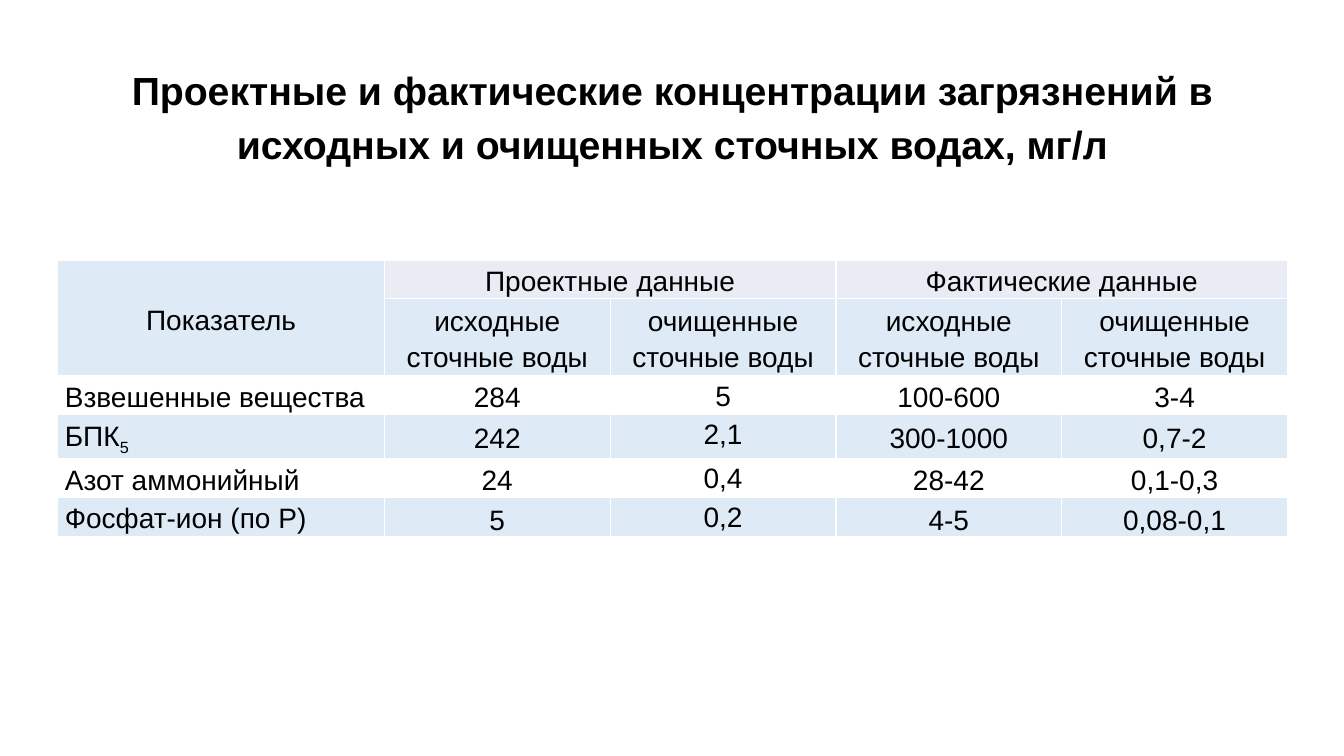
from dataclasses import dataclass

from lxml.etree import SubElement
from pptx import Presentation
from pptx.dml.color import RGBColor
from pptx.enum.text import MSO_ANCHOR, PP_ALIGN
from pptx.oxml.ns import qn
from pptx.util import Inches, Pt

SLIDE_WIDTH, SLIDE_HEIGHT = Inches(13.33), Inches(7.5)
BLACK, WHITE, BLUE, LAVENDER = "000000", "FFFFFF", "DEEBF7", "E9EBF5"
HEADING = ("Проектные и фактические концентрации загрязнений "
           "в исходных и очищенных сточных водах, мг/л")
WATERS = ("исходные сточные воды", "очищенные сточные воды")

# Percent of the slide's width and height
TABLE_LEFT, TABLE_TOP = 4.3, 34.4
INDICATOR_WIDTH, VALUE_WIDTH = 24.3, 16.8
HEADER_HEIGHT, ROW_HEIGHT = 3.87, 2.67
COLUMN_WIDTHS = [INDICATOR_WIDTH] + [VALUE_WIDTH] * 4


@dataclass(frozen=True)
class Indicator:
    name: str
    values: tuple[str, ...]
    fill: str
    subscript: str = ""
    value_anchor: MSO_ANCHOR = MSO_ANCHOR.MIDDLE


@dataclass(frozen=True)
class Header:
    text: str
    row: int
    column: int
    fill: str = BLUE
    rows: int = 1
    columns: int = 1


HEADERS = [
    Header("Показатель", 0, 0, rows=2),
    Header("Проектные данные", 0, 1, LAVENDER, columns=2),
    Header("Фактические данные", 0, 3, LAVENDER, columns=2),
    *(Header(water, 1, column) for column, water in enumerate(WATERS * 2, 1)),
]
INDICATORS = [
    Indicator("Взвешенные вещества", ("284", "5", "100-600", "3-4"), WHITE),
    Indicator("БПК", ("242", "2,1", "300-1000", "0,7-2"), BLUE, subscript="5"),
    Indicator("Азот аммонийный", ("24", "0,4", "28-42", "0,1-0,3"), WHITE),
    Indicator("Фосфат-ион (по Р)", ("5", "0,2", "4-5", "0,08-0,1"), BLUE,
              value_anchor=MSO_ANCHOR.BOTTOM),
]
ROW_HEIGHTS = [HEADER_HEIGHT] + [ROW_HEIGHT] * (len(INDICATORS) + 1)


def across(percent: float) -> int:
    return round(SLIDE_WIDTH * percent / 100)


def down(percent: float) -> int:
    return round(SLIDE_HEIGHT * percent / 100)


def color(value: str) -> RGBColor:
    return RGBColor.from_string(value)


def apply(target, formats: dict) -> None:
    for attribute, value in formats.items():
        setattr(target, attribute, value)


def write(paragraph, text: str, size: int, bold: bool = False,
          align: PP_ALIGN = PP_ALIGN.CENTER, subscript: str = "") -> None:
    apply(paragraph, {"alignment": align, "line_spacing": 1.15, "space_after": Pt(10)})
    for part, baseline in ((text, 0), (subscript, -25000)):
        if part:
            run = paragraph.add_run()
            run.text = part
            apply(run.font, {"name": "Arial", "size": Pt(size), "bold": bold})
            run.font.color.rgb = color(BLACK)
            if baseline:
                run.font._element.set("baseline", str(baseline))


def style_cell(cell, fill: str, anchor: MSO_ANCHOR = MSO_ANCHOR.MIDDLE) -> None:
    """Set the margins, white borders and fill of one cell."""
    apply(cell, {"margin_left": Inches(0.07), "margin_right": Inches(0.07),
                 "margin_top": 0, "margin_bottom": 0, "vertical_anchor": anchor})
    properties = cell._tc.get_or_add_tcPr()
    for side in ("lnL", "lnR", "lnT", "lnB"):
        border = SubElement(properties, qn(f"a:{side}"), w=str(Pt(1)))
        SubElement(SubElement(border, qn("a:solidFill")), qn("a:srgbClr"), val=WHITE)
    cell.fill.solid()
    cell.fill.fore_color.rgb = color(fill)


def add_heading(slide) -> None:
    frame = slide.shapes.add_textbox(
        across(6.9), down(5.33), across(86.25), down(19.33)).text_frame
    apply(frame, {"word_wrap": True, "vertical_anchor": MSO_ANCHOR.MIDDLE})
    write(frame.paragraphs[0], HEADING, 28, bold=True)


def add_header(table, header: Header) -> None:
    last_row = header.row + header.rows
    last_column = header.column + header.columns
    for row in range(header.row, last_row):
        for column in range(header.column, last_column):
            style_cell(table.cell(row, column), header.fill)
    cell = table.cell(header.row, header.column)
    if header.rows * header.columns > 1:
        cell.merge(table.cell(last_row - 1, last_column - 1))
    write(cell.text_frame.paragraphs[0], header.text, 20)


def add_indicator(table, row: int, indicator: Indicator) -> None:
    name = table.cell(row, 0)
    style_cell(name, indicator.fill)
    write(name.text_frame.paragraphs[0], indicator.name, 20,
          align=PP_ALIGN.JUSTIFY, subscript=indicator.subscript)
    for column, value in enumerate(indicator.values, 1):
        cell = table.cell(row, column)
        anchor = MSO_ANCHOR.TOP if column == 2 else indicator.value_anchor
        style_cell(cell, indicator.fill, anchor)
        write(cell.text_frame.paragraphs[0], value, 20)


def add_concentrations(slide) -> None:
    table = slide.shapes.add_table(
        len(ROW_HEIGHTS), len(COLUMN_WIDTHS), across(TABLE_LEFT), down(TABLE_TOP),
        across(sum(COLUMN_WIDTHS)), down(sum(ROW_HEIGHTS))).table
    apply(table, {"first_row": False, "horz_banding": False})
    for column, width in zip(table.columns, COLUMN_WIDTHS):
        column.width = across(width)
    for row, height in zip(table.rows, ROW_HEIGHTS):
        row.height = down(height)
    for header in HEADERS:
        add_header(table, header)
    for row, indicator in enumerate(INDICATORS, 2):
        add_indicator(table, row, indicator)


def main() -> None:
    presentation = Presentation()
    apply(presentation, {"slide_width": SLIDE_WIDTH, "slide_height": SLIDE_HEIGHT})
    slide = presentation.slides.add_slide(presentation.slide_layouts[6])
    add_heading(slide)
    add_concentrations(slide)
    presentation.save("out.pptx")


if __name__ == "__main__":
    main()
